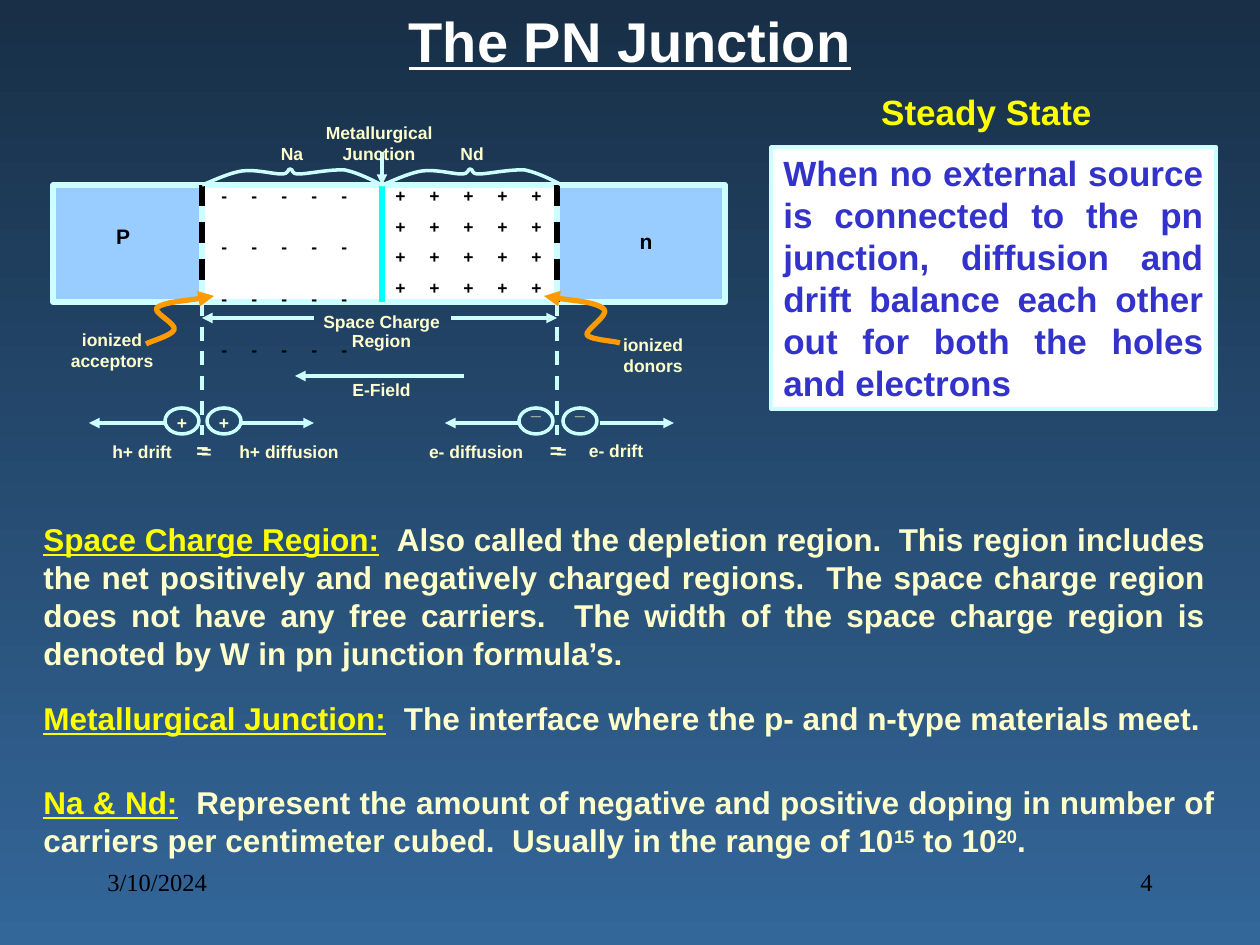
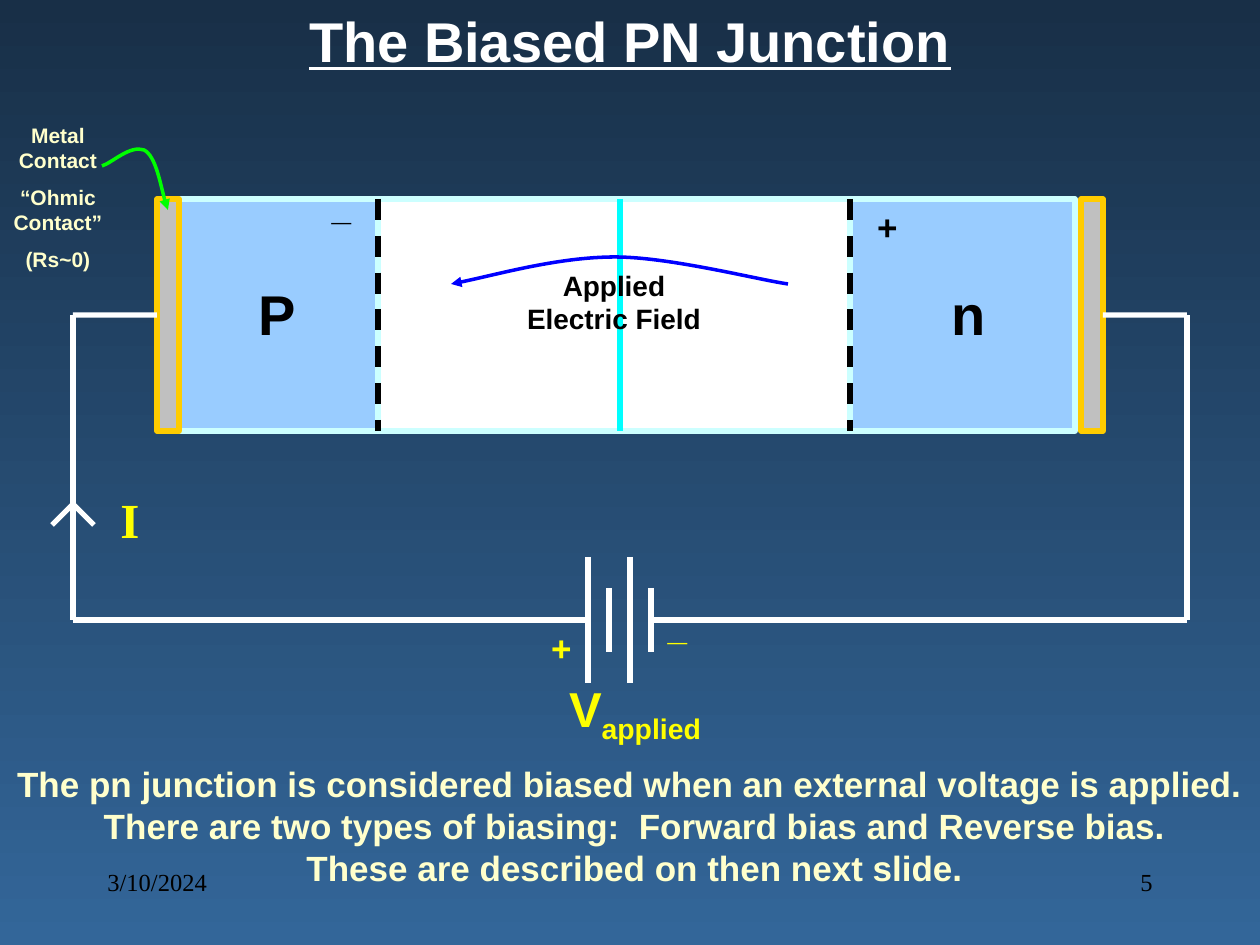
from typing import NamedTuple, Optional, Union

import pptx
import pptx.dml.color
import pptx.enum.dml
import pptx.enum.shapes
import pptx.enum.text
import pptx.oxml.ns
import pptx.util
from lxml import etree

# Shared scale, colours and fonts
EMU_PER_PX = 914400 / 126
WHITE, BLACK, YELLOW, CREAM = "FFFFFF", "000000", "FFFF00", "FFFFCC"
ICE, SKY, CYAN, ORANGE = "CCFFFF", "99CCFF", "00FFFF", "FF9900"
SANS, SERIF = "Arial", "Times New Roman"
ALIGN = pptx.enum.text.PP_ALIGN
SHAPE = pptx.enum.shapes.MSO_SHAPE
qn = pptx.oxml.ns.qn

Point = tuple[int, int]


class Span(NamedTuple):
    text: str
    color: str = CREAM
    underline: bool = False
    baseline: int = 0


class Label(NamedTuple):
    text: Union[str, tuple[Span, ...]]
    x: int
    y: int
    w: int
    h: int
    size: int = 10
    color: str = CREAM
    align: ALIGN = ALIGN.CENTER
    font: str = SANS
    bold: bool = True
    underline: bool = False
    leading: Optional[float] = None
    before: float = 0
    tab: int = 0


class Line(NamedTuple):
    start: Point
    end: Point
    color: str = ICE
    width: int = 2
    dashed: bool = False
    arrow: bool = False


class Curve(NamedTuple):
    points: tuple[Point, ...]
    color: str
    width: int = 2
    arrow: bool = True


class Box(NamedTuple):
    x: int
    y: int
    w: int
    h: int
    fill: Optional[str]
    line: str = ICE
    width: int = 3
    kind: SHAPE = SHAPE.RECTANGLE


def px(length: float) -> pptx.util.Emu:
    return pptx.util.Emu(round(length * EMU_PER_PX))


def rgb(code: str) -> pptx.dml.color.RGBColor:
    return pptx.dml.color.RGBColor.from_string(code)


# Drawing functions
def write(frame, label: Label) -> None:
    frame.word_wrap = True
    paragraphs = label.text.split("\n") if isinstance(label.text, str) else [label.text]
    for index, content in enumerate(paragraphs):
        para = frame.add_paragraph() if index else frame.paragraphs[0]
        if label.tab:
            stops = etree.SubElement(para._p.get_or_add_pPr(), qn("a:tabLst"))
            for column in range(1, 5):
                etree.SubElement(stops, qn("a:tab"), pos=str(px(column * label.tab)), algn="l")
        para.alignment = label.align
        if label.leading:
            para.line_spacing = label.leading
        if index:
            para.space_before = pptx.util.Pt(label.before)
        font = para.font
        font.name, font.size, font.bold = label.font, pptx.util.Pt(label.size), label.bold
        if isinstance(content, str):
            font.color.rgb = rgb(label.color)
            font.underline = label.underline
            para.add_run().text = content
            continue
        for part in content:
            span = para.add_run()
            span.text = part.text
            span.font.color.rgb = rgb(part.color)
            span.font.underline = part.underline
            if part.baseline:
                span._r.get_or_add_rPr().set("baseline", str(part.baseline * 1000))


def add_label(page, label: Label) -> None:
    box = page.shapes.add_textbox(px(label.x), px(label.y), px(label.w), px(label.h))
    write(box.text_frame, label)


def add_box(page, box: Box):
    shape = page.shapes.add_shape(box.kind, px(box.x), px(box.y), px(box.w), px(box.h))
    shape.shadow.inherit = False
    if box.fill:
        shape.fill.solid()
        shape.fill.fore_color.rgb = rgb(box.fill)
    else:
        shape.fill.background()
    shape.line.color.rgb = rgb(box.line)
    shape.line.width = pptx.util.Pt(box.width)
    return shape


def style_line(shape, color: str, width: int, arrow: bool) -> None:
    shape.line.color.rgb = rgb(color)
    shape.line.width = pptx.util.Pt(width)
    if arrow:
        outline = shape.element.spPr.find(qn("a:ln"))
        etree.SubElement(outline, qn("a:tailEnd"), type="triangle")


def add_line(page, line: Line):
    connector = page.shapes.add_connector(
        pptx.enum.shapes.MSO_CONNECTOR.STRAIGHT, *map(px, line.start + line.end))
    if line.dashed:
        connector.line.dash_style = pptx.enum.dml.MSO_LINE.DASH
    style_line(connector, line.color, line.width, line.arrow)
    etree.SubElement(connector.element.spPr, qn("a:effectLst"))
    return connector


def add_curve(page, curve: Curve) -> None:
    """Draw a start point followed by triples of Bezier points."""
    builder = page.shapes.build_freeform(*curve.points[0], scale=EMU_PER_PX)
    builder.add_line_segments(curve.points[1:], close=False)
    shape = builder.convert_to_shape()
    shape.shadow.inherit = False
    shape.fill.background()
    style_line(shape, curve.color, curve.width, curve.arrow)
    segments = list(shape.element.iter(qn("a:lnTo")))
    for first in range(0, len(segments), 3):
        bezier = etree.Element(qn("a:cubicBezTo"))
        segments[first].addprevious(bezier)
        for segment in segments[first:first + 3]:
            bezier.append(segment[0])
            segment.getparent().remove(segment)


# Parts both slides share
def start_page(deck, title: str):
    page = deck.slides.add_slide(deck.slide_layouts[6])
    fill = page.background.fill
    fill.gradient()
    fill.gradient_angle = 270
    for stop, color in zip(fill.gradient_stops, ("182F47", "336699")):
        stop.color.rgb = rgb(color)
    add_label(page, Label(title, 126, 0, 1008, 79, 32, WHITE, underline=True))
    return page


def add_footer(page, number: int) -> None:
    for text, x, align in (("3/10/2024", 95, ALIGN.LEFT), (str(number), 903, ALIGN.RIGHT)):
        add_label(page, Label(text, x, 861, 262, 63, 14, BLACK, align, SERIF, False))


def add_device(page, edges: tuple[int, ...], top: int, height: int) -> None:
    """Draw P, two depleted halves and n, with their boundaries."""
    for left, right, fill in zip(edges, edges[1:], (SKY, WHITE, WHITE, SKY)):
        add_box(page, Box(left, top, right - left, height, fill))
    for x, color in ((edges[1], BLACK), (edges[3], BLACK), (edges[2], CYAN)):
        add_line(page, Line((x, top), (x, top + height), color, 3, color == BLACK))


def add_junction_page(deck) -> None:
    page = start_page(deck, "The PN Junction")
    add_label(page, Label("Steady State", 766, 84, 441, 54, 20, YELLOW))

    # Device with its fixed charges
    left, middle, right = 202, 382, 557
    top, bottom = 185, 302
    add_device(page, (53, left, middle, right, 725), top, bottom - top)
    for text, x, y in (("P", 89, 217), ("n", 612, 222)):
        add_label(page, Label(text, x, y, 68, 38, 12, BLACK))
    for sign, x, pitch, before in (("-", 209, 30, 17.3), ("+", 383, 34, 5.5)):
        rows = "\n".join(["\t".join(sign * 5)] * 4)
        add_label(page, Label(rows, x, 179, 183, 129, 10, BLACK, ALIGN.LEFT,
                              before=before, tab=pitch))

    # Braces over the doped halves
    brace = ((0, 0), (6, -2), (26, -12), (40, -14), (53, -16), (71, -11), (79, -11),
             (88, -11), (85, -16), (88, -16), (92, -16), (88, -11), (97, -11),
             (105, -11), (129, -16), (143, -15), (157, -12), (172, -4), (180, 0))
    for origin in (left, middle):
        points = tuple((origin + x, top + y) for x, y in brace)
        add_curve(page, Curve(points, ICE, arrow=False))

    # Boundaries, region arrows and the field arrow
    for x in (left, right):
        add_line(page, Line((x, bottom), (x, 435), dashed=True))
    arrows = (((middle, 152), (middle, top)),
              ((314, 318), (left, 318)), ((451, 318), (right, 318)),
              ((464, 376), (295, 376)),
              ((239, 423), (314, 423)), ((600, 423), (674, 423)),
              ((519, 423), (445, 423)), ((165, 423), (89, 423)))
    for start, end in arrows:
        add_line(page, Line(start, end, arrow=True))
    acceptor_hook = ((146, 344), (151, 341), (171, 336), (174, 330), (178, 324),
                     (149, 311), (158, 307), (166, 302), (203, 299), (214, 296))
    donor_hook = ((620, 343), (615, 341), (591, 340), (587, 335), (585, 330),
                  (610, 315), (604, 309), (596, 302), (557, 299), (544, 296))
    for hook in (acceptor_hook, donor_hook):
        add_curve(page, Curve(hook, ORANGE, 3))

    # Moving carriers
    for x, sign, y in ((207, "+", 406), (165, "+", 406), (519, "_", 392), (563, "_", 392)):
        add_box(page, Box(x, 408, 34, 26, None, width=2, kind=SHAPE.OVAL))
        add_label(page, Label(sign, x - 8, y, 50, 32))

    # Diagram labels
    for label in (
        Label("Na", 258, 137, 68, 34),
        Label("Nd", 438, 137, 68, 34),
        Label("Metallurgical Junction", 289, 116, 180, 54),
        Label("Space Charge Region", 301, 307, 161, 50, leading=0.9),
        Label("ionized acceptors", 53, 323, 118, 54),
        Label("ionized donors", 600, 328, 106, 54),
        Label("E-Field", 301, 375, 161, 32, leading=0.9),
        Label("h+ drift", 83, 435, 118, 34),
        Label("h+ diffusion", 220, 435, 138, 34),
        Label("e- diffusion", 407, 435, 138, 34),
        Label("e- drift", 557, 434, 118, 34),
        Label("=", 189, 435, 25, 34),
        Label("=", 544, 435, 25, 34),
        Label("=", 179, 431, 42, 38, 12, align=ALIGN.RIGHT),
        Label("=", 535, 431, 42, 38, 12),
    ):
        add_label(page, label)

    # Steady state panel
    panel = add_box(page, Box(771, 147, 445, 262, WHITE, width=2))
    panel.text_frame.vertical_anchor = pptx.enum.text.MSO_ANCHOR.MIDDLE
    write(panel.text_frame, Label(
        "When no external source is connected to the pn junction, diffusion and drift "
        "balance each other out for both the holes and electrons",
        771, 147, 445, 262, 20, "3333CC", ALIGN.JUSTIFY))

    # Definitions
    definitions = (
        (514, 1187, 164, "Space Charge Region:", (Span(
            "Also called the depletion region.  This region includes the net positively and "
            "negatively charged regions.  The space charge region does not have any free "
            "carriers.  The width of the space charge region is denoted by W in pn junction "
            "formula’s."),)),
        (693, 1197, 50, "Metallurgical Junction:", (
            Span("The interface where the p- and n-type materials meet."),)),
        (777, 1197, 88, "Na & Nd:", (
            Span("Represent the amount of negative and positive doping in number of carriers "
                 "per centimeter cubed.  Usually in the range of 10"),
            Span("15", baseline=30), Span(" to 10"), Span("20", baseline=30), Span("."))),
    )
    for y, width, height, term, meaning in definitions:
        spans = (Span(term, YELLOW, True), Span("  ", YELLOW)) + meaning
        add_label(page, Label(spans, 31, y, width, height, 18, align=ALIGN.JUSTIFY))
    add_footer(page, 4)


def add_biased_page(deck) -> None:
    page = start_page(deck, "The Biased PN Junction")

    # Device, contacts and applied field
    top, height = 199, 232
    add_device(page, (179, 378, 620, 850, 1075), top, height)
    contacts = [add_box(page, Box(x, top, 22, height, "C0C0C0", "FFCC00"))
                for x in (157, 1081)]
    add_curve(page, Curve(((788, 284), (759, 280), (670, 257), (615, 257),
                           (558, 257), (485, 278), (451, 284)), "0000FF"))
    add_curve(page, Curve(((102, 166), (112, 163), (130, 145), (144, 150),
                           (156, 156), (163, 198), (168, 210)), "00FF00"))

    # Circuit: leads, wires, current arrow and battery plates
    wire_left, wire_right, lead, base = 73, 1187, 315, 620
    for contact, site, edge, x in ((contacts[0], 1, 157, wire_left),
                                   (contacts[1], 3, 1103, wire_right)):
        wire = add_line(page, Line((edge, lead), (x, lead), WHITE, 3))
        wire.begin_connect(contact, site)
    plates = (588, 609, 630, 651)
    wires = [((wire_left, lead), (wire_left, base)), ((wire_left, base), (plates[0], base)),
             ((wire_right, lead), (wire_right, base)), ((wire_right, base), (plates[3], base))]
    wires += [((wire_left, 504), (wire_left + side, 525)) for side in (-21, 21)]
    wires += [((x, base - half), (x, base + half)) for x, half in zip(plates, (63, 32, 63, 32))]
    for start, end in wires:
        add_line(page, Line(start, end, WHITE, 3))

    # Labels and caption
    for label in (
        Label("P", 231, 273, 92, 79, 32, BLACK),
        Label("n", 923, 273, 92, 79, 32, BLACK),
        Label("+", 861, 199, 53, 54, 20, BLACK),
        Label("_", 315, 179, 53, 54, 20, BLACK),
        Label("Applied Electric Field", 504, 262, 220, 81, 16, BLACK),
        Label("Metal Contact\n“Ohmic Contact”\n(Rs~0)", 0, 116, 116, 164, 12, before=6.8),
        Label("+", 535, 620, 53, 54, 20, YELLOW),
        Label("_", 651, 599, 53, 54, 20, YELLOW),
        Label((Span("V", YELLOW), Span("applied", YELLOW, baseline=-25)),
              525, 672, 220, 72, 28),
        Label("I", 84, 483, 92, 72, 28, YELLOW, font=SERIF),
        Label("The pn junction is considered biased when an external voltage is applied.  "
              "There are two types of biasing:  Forward bias and Reverse bias.\n"
              " These are described on then next slide.", 0, 756, 1260, 139, 20),
    ):
        add_label(page, label)
    add_footer(page, 5)


def main() -> None:
    deck = pptx.Presentation()
    deck.slide_width, deck.slide_height = px(1260), px(945)
    add_junction_page(deck)
    add_biased_page(deck)
    deck.save("out.pptx")


if __name__ == "__main__":
    main()
